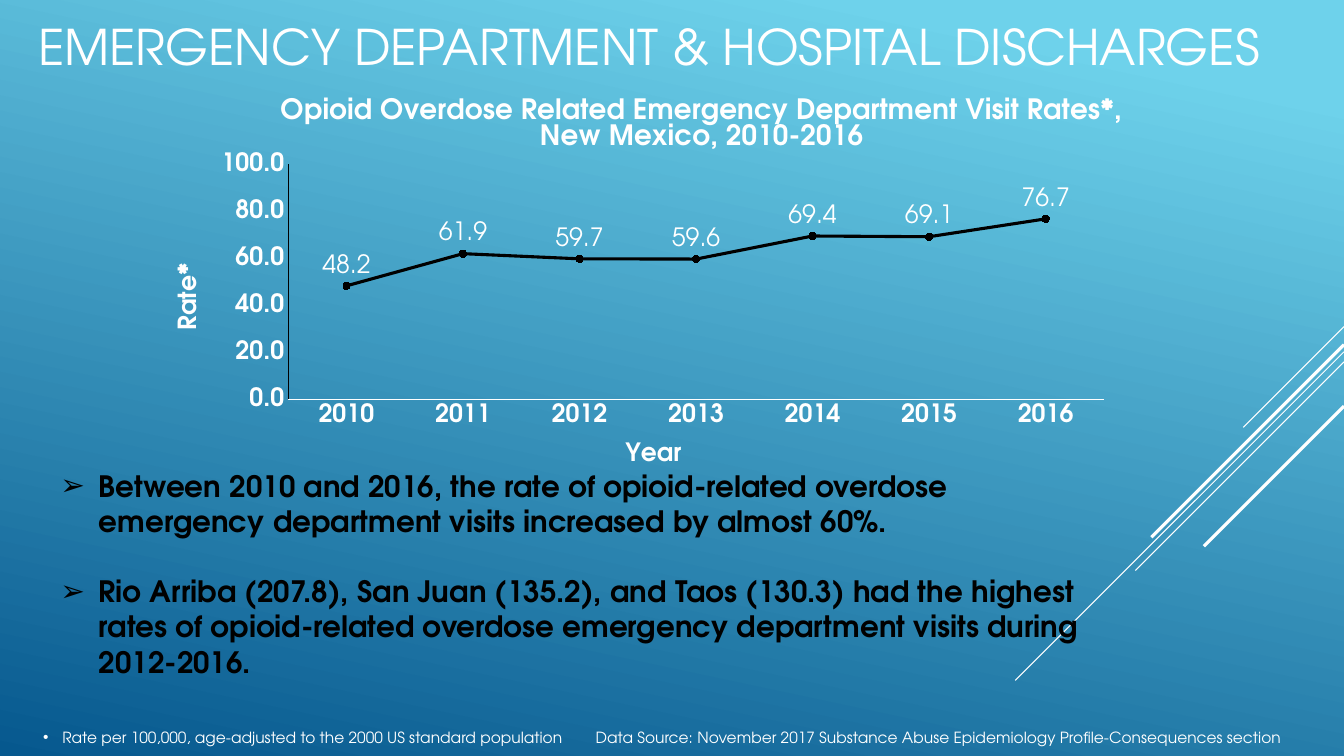
from dataclasses import dataclass

from lxml.etree import SubElement
from pptx import Presentation
from pptx.chart.data import CategoryChartData as ChartData
from pptx.dml.color import RGBColor as RGB
from pptx.enum.chart import XL_CHART_TYPE as Kind
from pptx.enum.chart import XL_LABEL_POSITION as Spot
from pptx.enum.chart import XL_MARKER_STYLE as Mark
from pptx.enum.chart import XL_TICK_MARK as Tick
from pptx.enum.shapes import MSO_CONNECTOR as Line
from pptx.enum.text import MSO_ANCHOR as Anchor
from pptx.enum.text import MSO_AUTO_SIZE as Fit
from pptx.enum.text import PP_ALIGN as Align
from pptx.oxml.ns import qn
from pptx.util import Inches, Pt


@dataclass(frozen=True)
class Theme:
    font: str = "TeX Gyre Adventor"
    white: RGB = RGB(0xFF, 0xFF, 0xFF)
    black: RGB = RGB(0, 0, 0)
    sky: RGB = RGB(0x6E, 0xD2, 0xEB)
    deep: RGB = RGB(0x06, 0x58, 0x8E)
    head: float = 35.1
    body: float = 21
    chart: float = 20
    axis: float = 18
    note: float = 11


T = Theme()

# Streaks: right-edge height, horizontal run (each falls at 45 degrees), weight
STREAKS = [(3.24, 1, 0.75), (3.49, 3.26, 0.75), (3.59, 2.07, 0.75),
           (3.42, 1.91, 2.25), (4.03, 1.39, 2.25)]
YEARS = [str(year) for year in range(2010, 2017)]
RATES = [48.2, 61.9, 59.7, 59.6, 69.4, 69.1, 76.7]
POINTS = [
    "Between 2010 and 2016, the rate of opioid-related overdose "
    "emergency department visits increased by almost 60%.",
    "Rio Arriba (207.8), San Juan (135.2), and Taos (130.3) had the highest "
    "rates of opioid-related overdose emergency department visits during 2012-2016.",
]


def style(font, size, color, bold=False):
    font.name, font.size, font.bold = T.font, Pt(size), bold
    font.color.rgb = color


def add_run(para, text, size, color, bold=False):
    run = para.add_run()
    run.text = text
    style(run.font, size, color, bold)


def place(shape, left, top, width, height):
    shape.left, shape.top = Inches(left), Inches(top)
    shape.width, shape.height = Inches(width), Inches(height)


def set_frame(frame, anchor):
    frame.word_wrap = True
    frame.auto_size = Fit.NONE
    frame.vertical_anchor = anchor


def bullet(para, char, indent):
    props = para._p.get_or_add_pPr()
    props.set("marL", str(Inches(indent)))
    props.set("indent", str(-Inches(indent)))
    SubElement(props, qn("a:buFont"), typeface="Arial")
    SubElement(props, qn("a:buChar"), char=char)


def paint(slide):
    fill = slide.background.fill
    fill.gradient()
    fill.gradient_angle = 258
    for stop, color, spot in zip(fill.gradient_stops, (T.sky, T.deep), (0.1, 1)):
        stop.color.rgb, stop.position = color, spot


def add_streaks(slide, edge):
    tree = slide.shapes._spTree
    for depth, (top, run, weight) in enumerate(STREAKS):
        line = slide.shapes.add_connector(
            Line.STRAIGHT, Inches(edge), Inches(top),
            Inches(edge - run), Inches(top + run))
        line.line.color.rgb, line.line.width = T.white, Pt(weight)
        SubElement(line._element.spPr, qn("a:effectLst"))
        tree.insert(2 + depth, line._element)  # behind the text


def add_head(slide, text):
    title = slide.shapes.title
    place(title, 0.28, 0.13, 12.65, 0.65)
    set_frame(title.text_frame, Anchor.MIDDLE)
    para = title.text_frame.paragraphs[0]
    para.alignment = Align.LEFT
    add_run(para, text, T.head, T.white)


def add_list(slide, points):
    body = slide.placeholders[1]
    place(body, 0.5, 4.59, 10.67, 2.22)
    frame = body.text_frame
    set_frame(frame, Anchor.TOP)
    for i, text in enumerate(points):
        para = frame.add_paragraph() if i else frame.paragraphs[0]
        para.space_before = Pt(25 if i else 0)
        bullet(para, "➢", 0.38)
        add_run(para, text, T.body, T.black, True)


def add_note(slide, text, left, width, char=None):
    box = slide.shapes.add_textbox(Inches(left), Inches(7.17), Inches(width), Inches(0.29))
    set_frame(box.text_frame, Anchor.TOP)
    para = box.text_frame.paragraphs[0]
    if char:
        bullet(para, char, 0.19)
    add_run(para, text, T.note, T.white)


def lay_out(parent, index, **sides):
    """Fix a chart part at the given fractions of the chart."""
    for old in parent.findall(qn("c:layout")):
        parent.remove(old)
    layout = SubElement(parent, qn("c:layout"))
    parent.insert(index, layout)
    manual = SubElement(layout, qn("c:manualLayout"))
    if "w" in sides:
        SubElement(manual, qn("c:layoutTarget"), val="inner")
    for side in "xy":
        SubElement(manual, qn(f"c:{side}Mode"), val="edge")
    for side, value in sides.items():
        SubElement(manual, qn(f"c:{side}"), val=str(value))


def set_title(title, lines, size, x, y):
    frame = title.text_frame
    for i, text in enumerate(lines):
        para = frame.add_paragraph() if i else frame.paragraphs[0]
        para.alignment = Align.CENTER
        add_run(para, text, size, T.white, True)
    lay_out(title._element, 1, x=x, y=y)


def set_axis(axis, name, color, x, y):
    axis.has_major_gridlines = False
    axis.major_tick_mark = axis.minor_tick_mark = Tick.NONE
    axis.format.line.color.rgb, axis.format.line.width = color, Pt(0.75)
    style(axis.tick_labels.font, T.axis, T.white, True)
    set_title(axis.axis_title, [name], T.axis, x, y)


def add_graph(slide):
    data = ChartData(number_format="0.0")
    data.categories = YEARS
    data.add_series("Series 1", RATES)
    chart = slide.shapes.add_chart(
        Kind.LINE_MARKERS, Inches(0.41), Inches(0.85),
        Inches(10.76), Inches(3.89), data).chart
    style(chart.font, 10, T.white)
    chart.has_legend = False
    set_title(chart.chart_title,
              ["Opioid Overdose Related Emergency Department Visit Rates*,",
               "New Mexico, 2010-2016"], T.chart, 0.22, 0.02)
    lay_out(chart._chartSpace.chart.plotArea, 0, x=0.23, y=0.2, w=0.76, h=0.6)

    # Axes
    set_axis(chart.category_axis, "Year", T.white, 0.54, 0.89)
    rate = chart.value_axis
    set_axis(rate, "Rate*", T.black, 0.12, 0.44)
    rate.axis_title.text_frame._txBody.bodyPr.set("rot", "-5400000")
    rate.minimum_scale, rate.maximum_scale, rate.major_unit = 0, 100, 20
    rate.tick_labels.number_format = "0.0"
    rate.tick_labels.number_format_is_linked = False

    # Series
    plot = chart.plots[0]
    plot.vary_by_categories = False
    series = plot.series[0]
    series.smooth = False
    series.format.line.color.rgb, series.format.line.width = T.black, Pt(2.25)
    mark = series.marker
    mark.style, mark.size = Mark.CIRCLE, 5
    mark.format.fill.solid()
    mark.format.fill.fore_color.rgb = T.black
    mark.format.line.color.rgb = T.black
    labels = series.data_labels
    labels.show_value, labels.position = True, Spot.ABOVE
    labels.number_format, labels.number_format_is_linked = "0.0", False
    style(labels.font, T.axis, T.white)


def main():
    deck = Presentation()
    deck.slide_width, deck.slide_height = Inches(13.33), Inches(7.5)
    slide = deck.slides.add_slide(deck.slide_layouts[1])
    paint(slide)
    add_streaks(slide, 13.33)
    add_head(slide, "EMERGENCY DEPARTMENT & HOSPITAL DISCHARGES")
    add_graph(slide)
    add_list(slide, POINTS)
    add_note(slide, "Rate per 100,000, age-adjusted to the 2000 US standard population",
             0.33, 5.48, "•")
    add_note(slide, "Data Source: November 2017 Substance Abuse Epidemiology "
             "Profile-Consequences section", 5.81, 7.2)
    deck.save("out.pptx")


if __name__ == "__main__":
    main()
